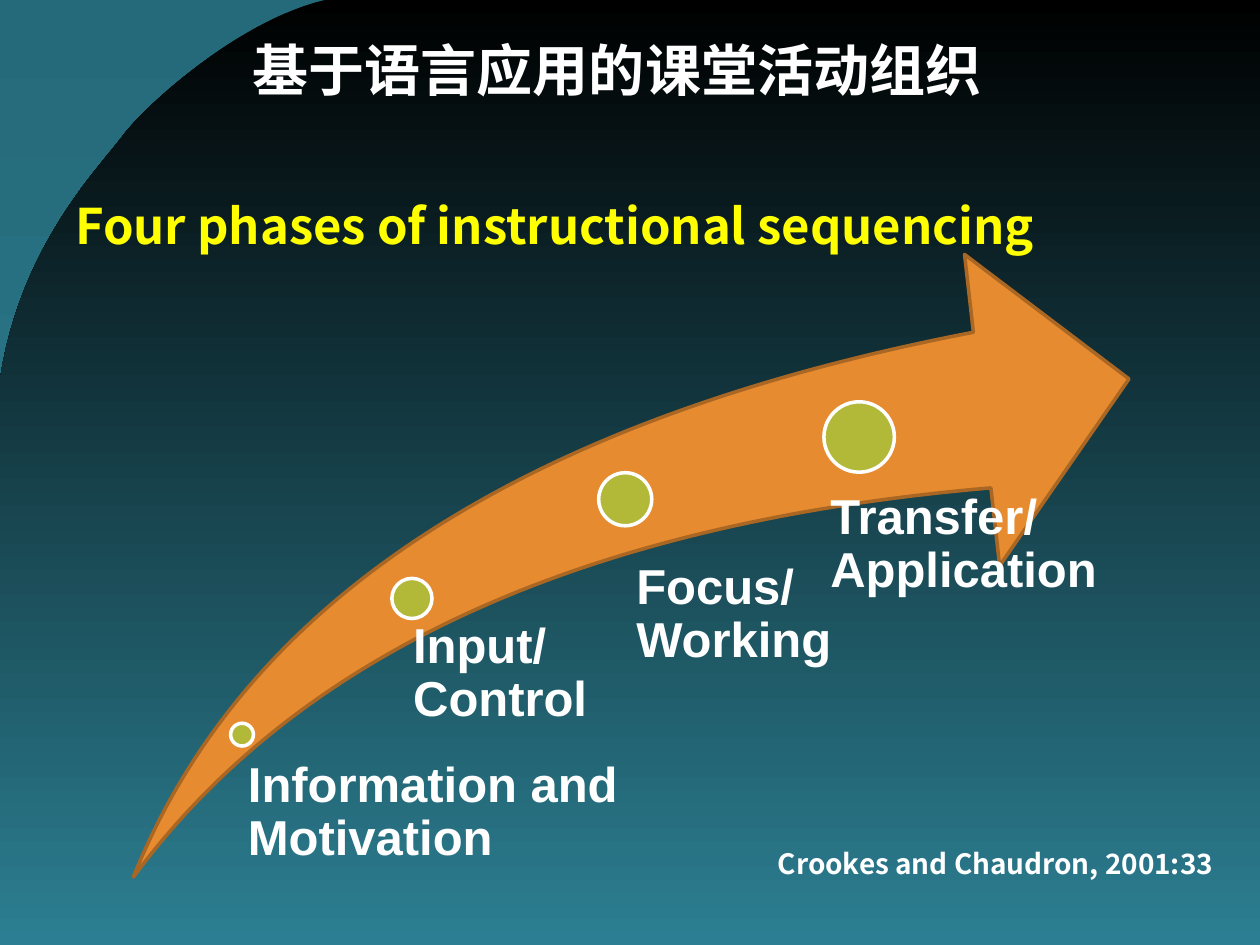
from lxml.etree import SubElement
from pptx import Presentation
from pptx.dml.color import RGBColor
from pptx.enum.shapes import MSO_SHAPE as Shape
from pptx.enum.text import MSO_ANCHOR as Anchor, MSO_AUTO_SIZE as AutoSize, PP_ALIGN as Align
from pptx.oxml.ns import qn
from pptx.util import Cm, Pt

# Content: lengths in centimetres
WIDTH, HEIGHT = 25.4, 19.05
HEAD_FONT, LABEL_FONT = "Noto Sans CJK SC", "Arial"
WHITE, YELLOW = "FFFFFF", "FFFF00"
ORANGE, BROWN, GREEN = "E68B30", "AA6724", "B2B838"
BLACK, DARK_TEAL, TEAL = "000000", "256A7A", "2C7F92"

TITLE = "基于语言应用的课堂活动组织"
HEADING = "Four phases of instructional sequencing"
CREDIT = "Crookes and Chaudron, 2001:33"
ARROW = (2.69, 5.13, 20.07, 12.55)
# Phase, dot (left, top, diameter), caption (left, top, width, height), left inset
PHASES = [
    ("Information and Motivation", (4.65, 14.58, 0.46), (4.75, 15.32, 7.95, 2.21), 0.25),
    ("Input/ Control", (7.9, 11.66, 0.81), (7.9, 12.52, 6.35, 4.8), 0.43),
    ("Focus/ Working", (12.07, 9.53, 1.07), (12.27, 11.33, 6.65, 5.18), 0.56),
    ("Transfer/ Application", (16.61, 8.1, 1.42), (15.98, 9.93, 6.88, 6.76), 0.76),
]
# Bezier curves of the backdrop's upper left edge
EDGE = [
    ((6.55, 0), (4.83, 0.41), (2.95, 2.11), (2.49, 2.72)),
    ((2.49, 2.72), (2.03, 3.35), (0.41, 4.93), (0, 7.65)),
]
CORNERS = [(0, HEIGHT), (WIDTH, HEIGHT), (WIDTH, 0)]
STEPS = 24


def color(value):
    return RGBColor.from_string(value)


def lengths(values):
    return [Cm(value) for value in values]


def shade_down(fill, top, bottom):
    fill.gradient()
    fill.gradient_angle = 270
    for stop, position, shade in zip(fill.gradient_stops, (0, 1), (top, bottom)):
        stop.position = position
        stop.color.rgb = color(shade)


def curve_point(curve, t):
    weights = ((1 - t) ** 3, 3 * t * (1 - t) ** 2, 3 * t * t * (1 - t), t ** 3)
    return tuple(sum(w * point[axis] for w, point in zip(weights, curve)) for axis in (0, 1))


def write(box, text, size, font, shade, align=Align.LEFT, inset=0.25, spacing=1):
    frame = box.text_frame
    frame.auto_size = AutoSize.NONE
    frame.word_wrap = True
    frame.vertical_anchor = Anchor.TOP
    frame.margin_left = Cm(inset)
    frame.margin_top = frame.margin_right = frame.margin_bottom = 0
    frame.text = text
    para = frame.paragraphs[0]
    para.alignment, para.line_spacing = align, spacing
    para.font.size, para.font.name, para.font.bold = Pt(size), font, True
    para.font.color.rgb = color(shade)
    # East Asian letters take the same font
    defaults = para._p.pPr.find(qn("a:defRPr"))
    SubElement(defaults, qn("a:ea"), typeface=font)


def add_preset(shapes, kind, place, fill, line):
    shape = shapes.add_shape(kind, *lengths(place))
    shape.shadow.inherit = False
    shape.fill.solid()
    shape.fill.fore_color.rgb = color(fill)
    shape.line.color.rgb = color(line)
    shape.line.width = Pt(2)
    return shape


deck = Presentation()
deck.slide_width, deck.slide_height = Cm(WIDTH), Cm(HEIGHT)
page = deck.slides.add_slide(deck.slide_layouts[5])
title = page.shapes.title

# Background and curved backdrop, behind the title
shade_down(page.background.fill, DARK_TEAL, TEAL)
outline = [curve_point(curve, step / STEPS) for curve in EDGE for step in range(1, STEPS + 1)]
builder = page.shapes.build_freeform(*lengths(EDGE[0][0]))
builder.add_line_segments([lengths(point) for point in outline + CORNERS], close=True)
backdrop = builder.convert_to_shape()
backdrop.shadow.inherit = False
backdrop.line.fill.background()
shade_down(backdrop.fill, BLACK, TEAL)
title.element.addprevious(backdrop.element)

# Title, heading and credit
title.left, title.top, title.width, title.height = lengths((0, 0.71, 24.89, 3.18))
write(title, TITLE, 32, HEAD_FONT, WHITE, Align.CENTER, inset=0)
heading = page.shapes.add_textbox(*lengths((1.27, 3.94, 23.44, 1.5)))
write(heading, HEADING, 28, HEAD_FONT, YELLOW)
credit = page.shapes.add_textbox(*lengths((1.27, 17.07, 23.19, 0.9)))
write(credit, CREDIT, 16, HEAD_FONT, WHITE, Align.RIGHT)

# Rising arrow with the four phases
diagram = page.shapes.add_group_shape().shapes
arrow = add_preset(diagram, Shape.SWOOSH_ARROW, ARROW, ORANGE, BROWN)
arrow.adjustments[0] = arrow.adjustments[1] = 0.25
for phase, (left, top, diameter), place, inset in PHASES:
    add_preset(diagram, Shape.OVAL, (left, top, diameter, diameter), GREEN, WHITE)
    caption = diagram.add_textbox(*lengths(place))
    write(caption, phase, 28, LABEL_FONT, WHITE, inset=inset, spacing=0.9)

deck.save("out.pptx")
